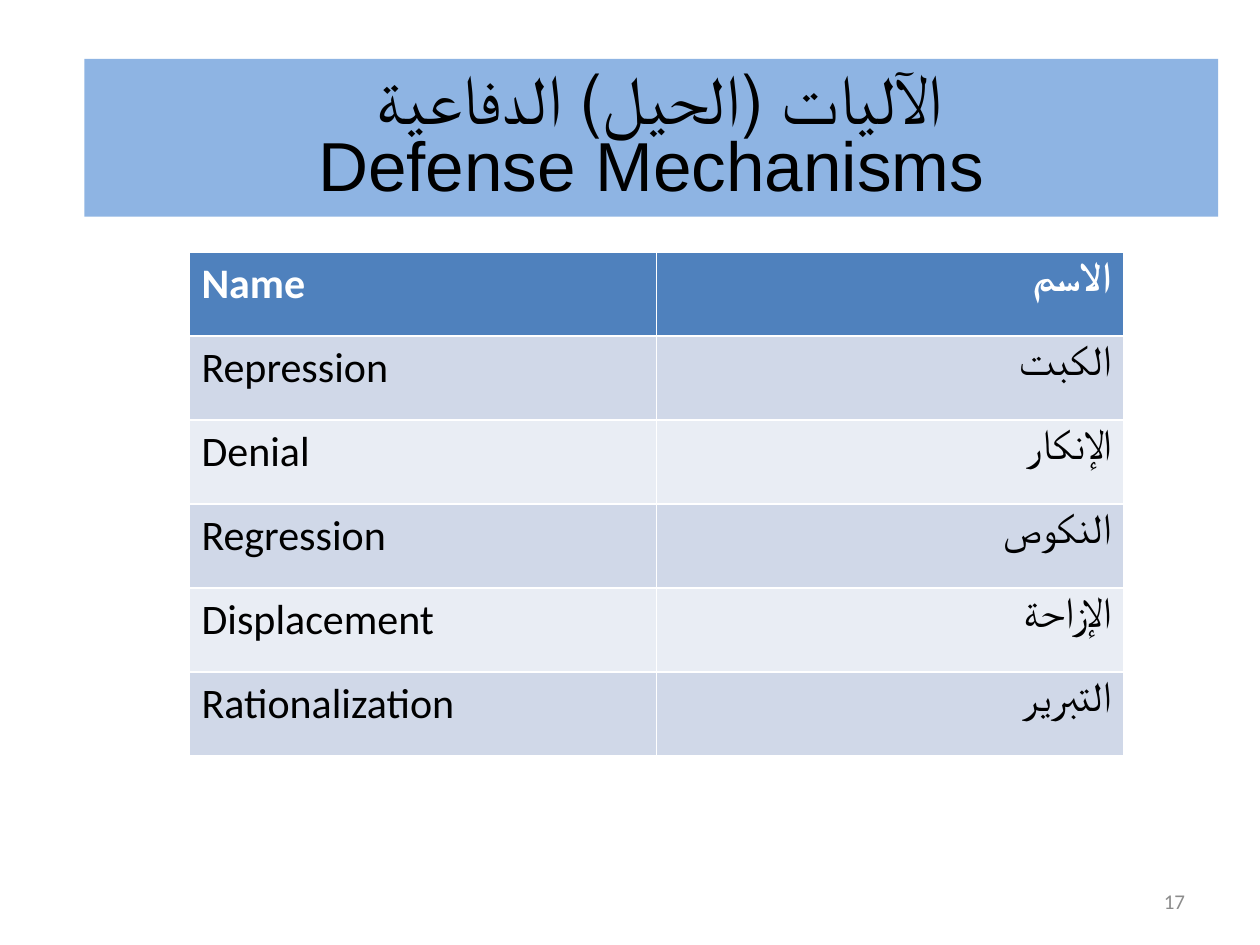
"""Build the defense mechanisms slide with its bilingual table."""
from pptx import Presentation
from pptx.dml.color import RGBColor
from pptx.enum.shapes import MSO_SHAPE
from pptx.enum.text import MSO_ANCHOR as Anchor, PP_ALIGN as Align
from pptx.util import Cm, Pt


def color(value):
    return RGBColor.from_string(value)


def format_text(paragraph, font, size, value, align, bold=False):
    paragraph.alignment = align
    for run in paragraph.runs:
        run.font.name = font
        run.font.size = Pt(size)
        run.font.bold = bold
        run.font.color.rgb = color(value)


ROWS = [
    ("Name", "الاسم"),
    ("Repression", "الكبت"),
    ("Denial", "الإنكار"),
    ("Regression", "النكوص"),
    ("Displacement", "الإزاحة"),
    ("Rationalization", "التبرير"),
]
BANDS = ["E9EDF4", "D0D8E8"]

presentation = Presentation()
presentation.slide_width = Cm(25.4)
presentation.slide_height = Cm(19.05)
slide = presentation.slides.add_slide(presentation.slide_layouts[6])

table = slide.shapes.add_table(
    len(ROWS), 2, Cm(3.81), Cm(5.08), Cm(18.85), Cm(10.16)
).table
for row_index, names in enumerate(ROWS):
    is_header = row_index == 0
    for column_index, name in enumerate(names):
        cell = table.cell(row_index, column_index)
        cell.fill.solid()
        cell.fill.fore_color.rgb = color("4F81BD" if is_header else BANDS[row_index % 2])
        cell.text_frame.text = name
        paragraph = cell.text_frame.paragraphs[0]
        is_arabic = column_index == 1
        format_text(paragraph, "Calibri", 24, "FFFFFF" if is_header else "000000",
                    Align.RIGHT if is_arabic else Align.LEFT, is_header)
        if is_arabic:
            paragraph._p.get_or_add_pPr().set("rtl", "1")

title = slide.shapes.add_shape(
    MSO_SHAPE.RECTANGLE, Cm(1.7), Cm(1.19), Cm(22.86), Cm(3.18)
)
title.shadow.inherit = False
title.fill.solid()
title.fill.fore_color.rgb = color("8EB4E3")
title.line.fill.background()
title.text_frame.word_wrap = True
title.text_frame.vertical_anchor = Anchor.MIDDLE
paragraph = title.text_frame.paragraphs[0]
paragraph.text = " الآليات (الحيل) الدفاعية\vDefense Mechanisms"
paragraph.line_spacing = 0.8
format_text(paragraph, "Arial", 39.6, "000000", Align.CENTER)

page_number = slide.shapes.add_textbox(Cm(18.21), Cm(17.65), Cm(5.93), Cm(1.02))
page_number.text_frame.word_wrap = True
page_number.text_frame.vertical_anchor = Anchor.MIDDLE
page_number.text_frame.text = "17"
format_text(page_number.text_frame.paragraphs[0], "Calibri", 12, "8C8C8C", Align.RIGHT)

presentation.save("out.pptx")
